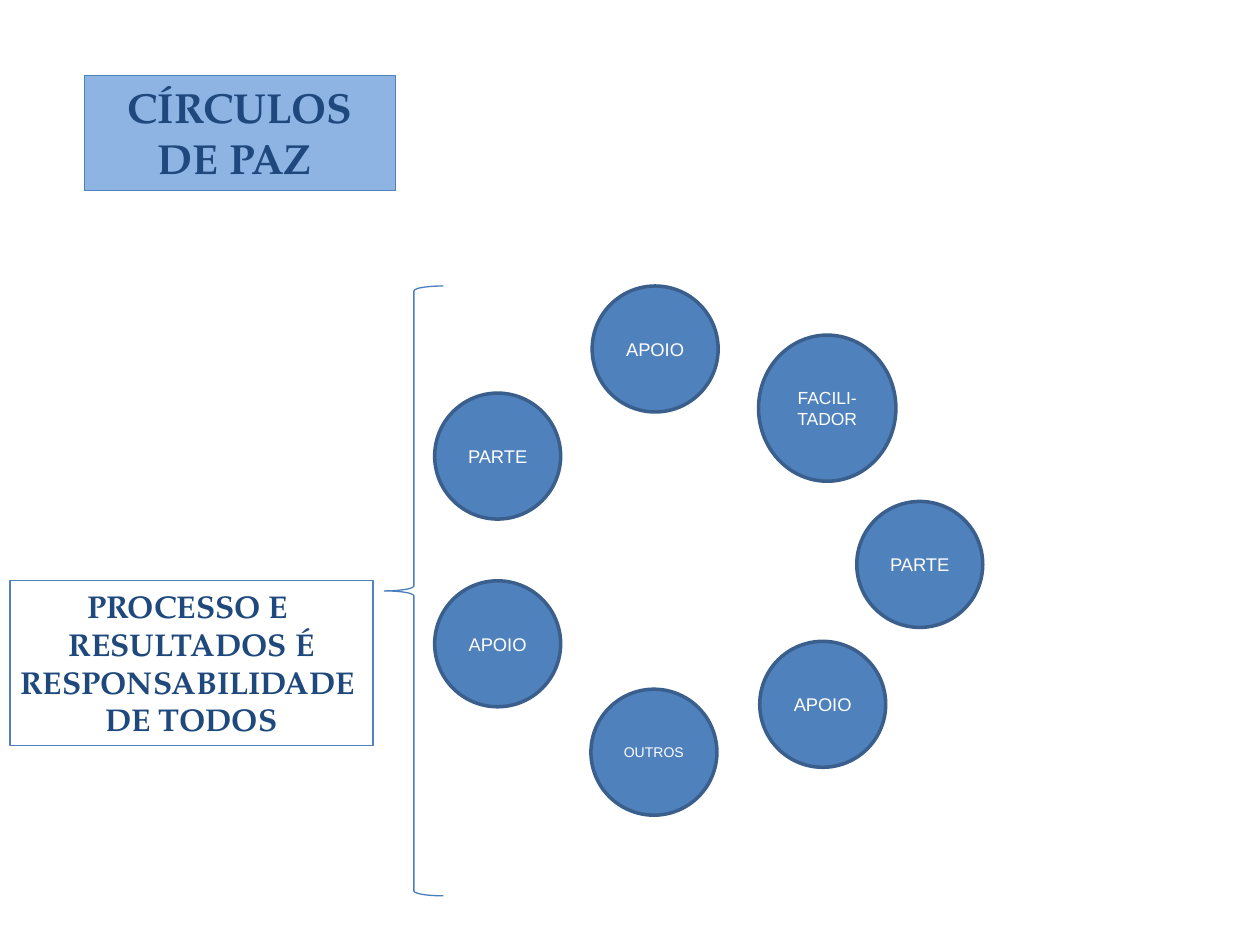
from dataclasses import dataclass

from pptx import Presentation
from pptx.dml.color import RGBColor
from pptx.enum.shapes import MSO_SHAPE as Kind
from pptx.enum.text import MSO_ANCHOR as Anchor, MSO_AUTO_SIZE as Fit, PP_ALIGN as Align
from pptx.util import Emu, Pt

PX = 9144  # 100 px to the inch
BLUE, NAVY, PALE, EDGE = "4F81BD", "1F497D", "8EB4E3", "3A5F8C"
SERIF, SANS = "TeX Gyre Pagella", "Arial"


@dataclass
class Disc:
    x: int
    y: int
    lines: list[str]
    w: int = 100
    h: int = 100
    size: float = 10.5


@dataclass
class Style:
    size: float
    face: str
    color: str
    bold: bool = False


DISCS = [
    Disc(470, 227, ["APOIO"]),
    Disc(602, 266, ["FACILI-", "TADOR"], 109, 116, 10),
    Disc(603, 509, ["APOIO"]),
    Disc(469, 547, ["OUTROS"], size=8),
    Disc(345, 461, ["APOIO"]),
    Disc(345, 312, ["PARTE"]),
    Disc(680, 398, ["PARTE"]),
]


def px(n: int) -> Emu:
    return Emu(n * PX)


def rgb(code: str) -> RGBColor:
    return RGBColor.from_string(code)


def paint(shape, fill: str | None, line: str, width: float) -> None:
    if fill:
        shape.fill.solid()
        shape.fill.fore_color.rgb = rgb(fill)
    else:
        shape.fill.background()
    shape.line.color.rgb = rgb(line)
    shape.line.width = Pt(width)


def write(shape, lines: list[str], style: Style, anchor: Anchor, wrap: bool = True) -> None:
    frame = shape.text_frame
    frame.auto_size = Fit.NONE
    frame.word_wrap = wrap
    frame.vertical_anchor = anchor
    for i, line in enumerate(lines):
        para = frame.add_paragraph() if i else frame.paragraphs[0]
        para.alignment = Align.CENTER
        run = para.add_run()
        run.text = line
        font = run.font
        font.size, font.name, font.bold = Pt(style.size), style.face, style.bold
        font.color.rgb = rgb(style.color)


def add(slide, kind: Kind, x: int, y: int, w: int, h: int):
    shape = slide.shapes.add_shape(kind, px(x), px(y), px(w), px(h))
    shape.shadow.inherit = False
    return shape


def draw_disc(slide, disc: Disc) -> None:
    shape = add(slide, Kind.OVAL, disc.x, disc.y, disc.w, disc.h)
    paint(shape, BLUE, EDGE, 2)
    write(shape, disc.lines, Style(disc.size, SANS, "FFFFFF"), Anchor.MIDDLE)


def main() -> None:
    deck = Presentation()
    deck.slide_width, deck.slide_height = px(1000), px(750)
    slide = deck.slides.add_slide(deck.slide_layouts[5])

    # Title
    title = slide.shapes.title
    title.left, title.top, title.width, title.height = map(px, (67, 60, 247, 91))
    paint(title, PALE, BLUE, 0.75)
    write(title, ["CÍRCULOS DE PAZ "], Style(24, SERIF, NAVY, True), Anchor.TOP)

    # Circle of people
    for disc in DISCS:
        draw_disc(slide, disc)

    # Shared duty, with its brace
    note = slide.shapes.add_textbox(px(8), px(461), px(288), px(131))
    paint(note, None, BLUE, 0.75)
    duty = ["PROCESSO E ", "RESULTADOS É", "RESPONSABILIDADE ", "DE TODOS"]
    write(note, duty, Style(18, SERIF, NAVY, True), Anchor.TOP, wrap=False)
    brace = add(slide, Kind.LEFT_BRACE, 305, 227, 47, 484)
    paint(brace, None, "4B7EBC", 0.75)

    deck.save("out.pptx")


if __name__ == "__main__":
    main()
